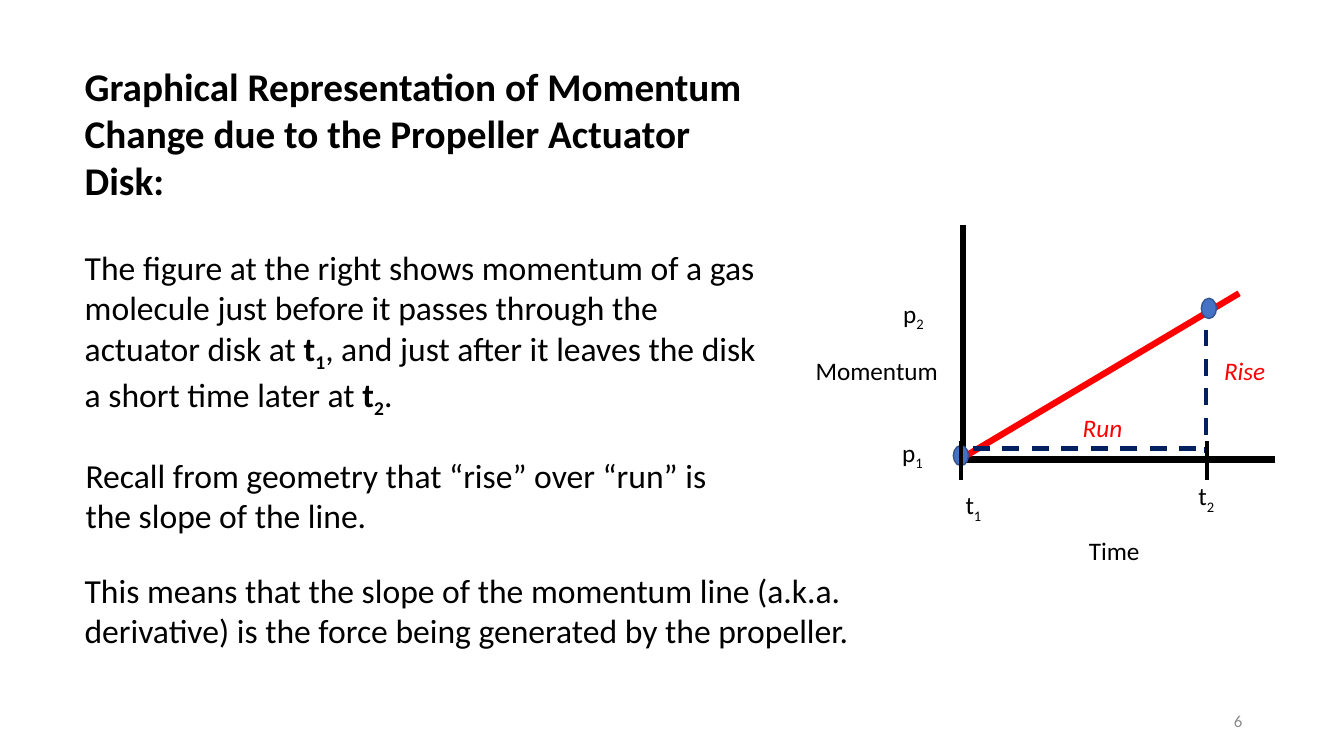
from dataclasses import dataclass

from lxml import etree
from pptx import Presentation
from pptx.dml.color import RGBColor
from pptx.enum.dml import MSO_LINE
from pptx.enum.shapes import MSO_CONNECTOR, MSO_SHAPE
from pptx.enum.text import MSO_ANCHOR, MSO_AUTO_SIZE, PP_ALIGN
from pptx.oxml.ns import qn
from pptx.util import Inches, Pt


@dataclass(frozen=True)
class Theme:
    font: str = "Calibri"
    title: int = 28
    body: int = 24
    label: int = 18
    number: int = 12
    black: str = "000000"
    red: str = "FF0000"
    navy: str = "002060"
    dot: str = "4472C4"
    dot_edge: str = "325491"
    gray: str = "8C8C8C"


T = Theme()


def rgb(color):
    return RGBColor.from_string(color)


def place(sp, left, top, width, height):
    sp.left, sp.top = Inches(left), Inches(top)
    sp.width, sp.height = Inches(width), Inches(height)


def write(sp, runs, size, color=T.black, align=PP_ALIGN.LEFT, anchor=MSO_ANCHOR.TOP):
    """Fill one paragraph with (text, style) runs; styles: b bold, i italic, _ subscript."""
    tf = sp.text_frame
    tf.word_wrap = True
    tf.auto_size = MSO_AUTO_SIZE.NONE
    tf.vertical_anchor = anchor
    p = tf.paragraphs[0]
    p.alignment = align
    p.space_before = Pt(0)
    for text, style in runs:
        r = p.add_run()
        r.text = text
        r.font.name, r.font.size = T.font, Pt(size)
        r.font.bold, r.font.italic = "b" in style, "i" in style
        r.font.color.rgb = rgb(color)
        if "_" in style:
            r._r.get_or_add_rPr().set("baseline", "-25000")
    return p


def add_text(s, box, runs, size, **options):
    sp = s.shapes.add_textbox(0, 0, 0, 0)
    place(sp, *box)
    write(sp, runs, size, **options)


def add_line(s, start, end, color, width, dashed=False):
    line = s.shapes.add_connector(MSO_CONNECTOR.STRAIGHT, *map(Inches, start + end))
    line.line.color.rgb = rgb(color)
    line.line.width = Pt(width)
    if dashed:
        line.line.dash_style = MSO_LINE.DASH
    etree.SubElement(line._element.spPr, qn("a:effectLst"))


def add_dot(s, x, y, width=0.15, height=0.2):
    sp = s.shapes.add_shape(MSO_SHAPE.OVAL, 0, 0, 0, 0)
    place(sp, x - width / 2, y - height / 2, width, height)
    sp.shadow.inherit = False
    sp.fill.solid()
    sp.fill.fore_color.rgb = rgb(T.dot)
    sp.line.color.rgb = rgb(T.dot_edge)
    sp.line.width = Pt(1)


def add_explanation(s, left, top):
    # Heading
    place(s.shapes.title, left, top, 6.95, 1.55)
    write(s.shapes.title, [("Graphical Representation of Momentum Change due to "
                            "the Propeller Actuator Disk:", "b")], T.title)

    # First paragraph, without a bullet
    body = s.placeholders[1]
    place(body, left, top + 1.83, 6.95, 1.75)
    p = write(body, [
        ("The figure at the right shows momentum of a gas molecule just before "
         "it passes through the actuator disk at ", ""),
        ("t", "b"), ("1", "b_"),
        (", and just after it leaves the disk a short time later at ", ""),
        ("t", "b"), ("2", "b_"), (".", "")], T.body)
    pPr = p._p.get_or_add_pPr()
    pPr.set("marL", "0")
    pPr.set("indent", "0")
    etree.SubElement(pPr, qn("a:buNone"))

    # Geometry reminder and conclusion
    add_text(s, (left + 0.01, top + 3.89, 6.65, 0.91),
             [("Recall from geometry that “rise” over “run” is the slope of the line.", "")],
             T.body)
    add_text(s, (left, top + 5.03, 8.81, 0.91),
             [("This means that the slope of the momentum line (a.k.a. derivative) "
               "is the force being generated by the propeller.", "")], T.body)


def add_graph(s, left, top):
    def at(x, y):
        return left + x, top + y

    # Axes
    add_line(s, at(1.56, 0), at(1.56, 2.35), T.black, 4.5)
    add_line(s, at(4.66, 2.33), at(1.54, 2.33), T.black, 4.5)

    # Momentum line with its two states
    add_line(s, at(1.56, 2.31), at(4.3, 0.68), T.red, 4.5)
    add_dot(s, *at(1.54, 2.29))
    add_dot(s, *at(4, 0.83))

    # Run and rise
    add_line(s, at(1.66, 2.22), at(3.92, 2.22), T.navy, 3, dashed=True)
    add_line(s, at(3.97, 1.04), at(3.97, 2.26), T.navy, 3, dashed=True)

    # Time ticks
    for x in (1.54, 3.98):
        add_line(s, at(x, 2.15), at(x, 2.53), T.black, 3)

    # Labels
    mid, start = PP_ALIGN.CENTER, PP_ALIGN.LEFT
    labels = [
        (0, 1.25, 1.68, [("Momentum", "")], T.black, start),
        (2.22, 3.03, 1.68, [("Time", "")], T.black, mid),
        (2.33, 1.81, 1.23, [("Run", "i")], T.red, mid),
        (3.74, 1.25, 1.23, [("Rise", "i")], T.red, mid),
        (1.35, 2.58, 0.63, [("t", ""), ("1", "_")], T.black, mid),
        (3.66, 2.49, 0.63, [("t", ""), ("2", "_")], T.black, mid),
        (0.87, 0.68, 0.63, [("p", ""), ("2", "_")], T.black, start),
        (0.86, 2.06, 0.63, [("p", ""), ("1", "_")], T.black, start),
    ]
    for x, y, width, runs, color, align in labels:
        add_text(s, (*at(x, y), width, 0.4), runs, T.label, color=color, align=align)


def add_page_number(s, left, top):
    add_text(s, (left, top, 3, 0.4), [("6", "")], T.number, color=T.gray,
             align=PP_ALIGN.RIGHT, anchor=MSO_ANCHOR.MIDDLE)


def main():
    prs = Presentation()
    prs.slide_width, prs.slide_height = Inches(13.33), Inches(7.5)
    s = prs.slides.add_slide(prs.slide_layouts[1])
    add_explanation(s, 0.74, 0.57)
    add_graph(s, 7.99, 2.23)
    add_page_number(s, 9.42, 6.95)
    prs.save("out.pptx")


if __name__ == "__main__":
    main()
